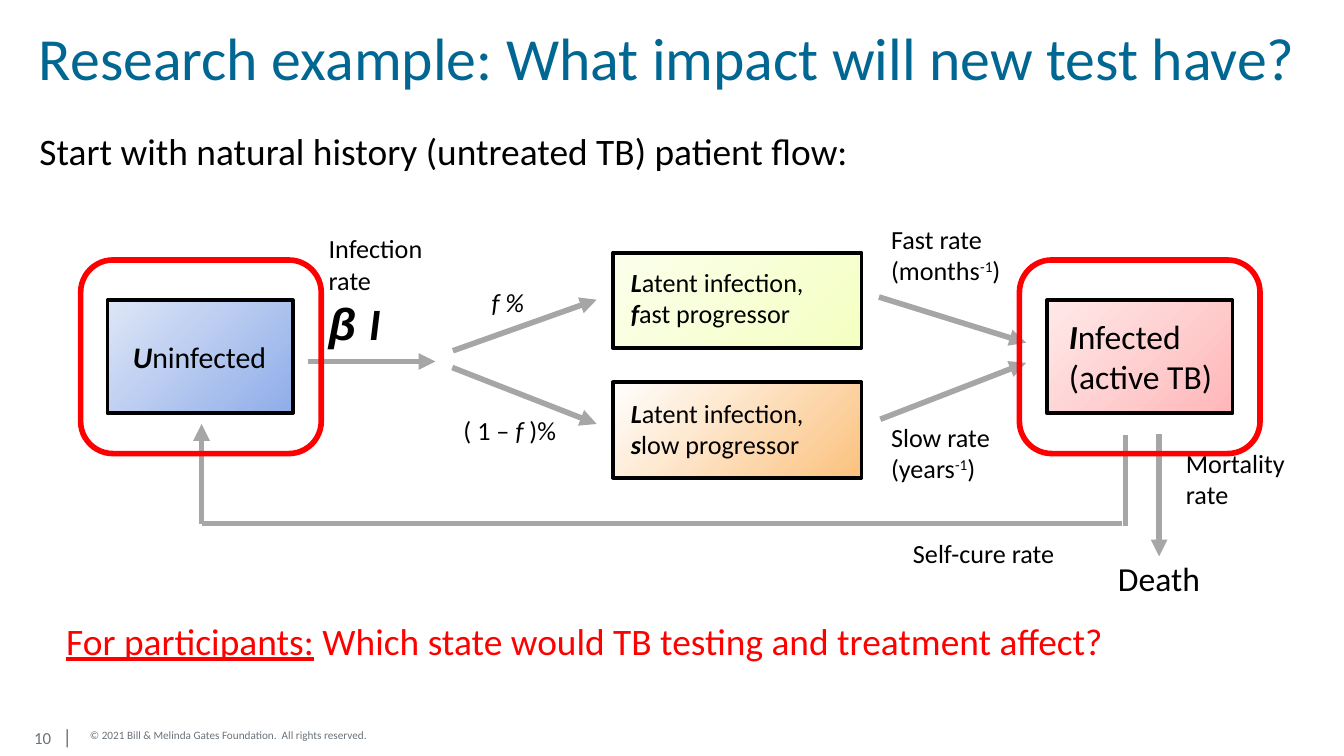
from pptx import Presentation
from pptx.dml.color import RGBColor
from pptx.enum.shapes import MSO_CONNECTOR, MSO_SHAPE
from pptx.enum.text import MSO_ANCHOR, MSO_AUTO_SIZE, PP_ALIGN
from pptx.oxml.ns import qn
from pptx.util import Pt
from lxml.etree import SubElement

PX = 4572
COLORS = {
    "title": "006692", "text": "000000", "alert": "FF0000",
    "arrow": "A6A6A6", "footer": "6A737B",
    "uninfected": ("8FADE9", "DEE6F7"), "infected": ("FFB7B9", "FFE9E9"),
    "fast": ("F4FFC2", "FBFFEB"), "slow": ("FBC17E", "FFFFFF"),
}
INITIAL = {"bold": True, "italic": True}
ITALIC = {"italic": True}
SUPERSCRIPT = {"baseline": "30000"}


def rgb(name):
    """Return the colour stored under a name."""
    return RGBColor.from_string(COLORS[name])


def place(*lengths):
    """Turn px lengths into EMU."""
    return [length * PX for length in lengths]


def write(frame, spans, size, color, inset=(20, 10)):
    """Fill a text frame with one paragraph of styled spans."""
    frame.margin_left = frame.margin_right = inset[0] * PX
    frame.margin_top = frame.margin_bottom = inset[1] * PX
    paragraph = frame.paragraphs[0]
    paragraph.alignment = PP_ALIGN.LEFT
    paragraph.font.name = "Calibri"
    paragraph.font.size = Pt(size)
    paragraph.font.color.rgb = rgb(color)
    for text, style in spans:
        if text == "\n":
            paragraph.add_line_break()
            continue
        run = paragraph.add_run()
        run.text = text
        for key, value in style.items():
            if key == "baseline":
                run._r.get_or_add_rPr().set(key, value)
            else:
                setattr(run.font, key, value)


def add_title(slide, text):
    """Move and format the title placeholder."""
    title = slide.shapes.title
    title.left, title.top, title.width, title.height = place(40, 22, 1910, 136)
    frame = title.text_frame
    frame.auto_size = MSO_AUTO_SIZE.NONE
    frame.vertical_anchor = MSO_ANCHOR.TOP
    write(frame, [(text, {})], 32, "title", (18, 9))


def add_label(slide, box, spans, size=14, color="text", inset=(20, 10), wrap=True):
    """Add a text box that grows with its text."""
    frame = slide.shapes.add_textbox(*place(*box)).text_frame
    frame.word_wrap = wrap
    frame.auto_size = MSO_AUTO_SIZE.SHAPE_TO_FIT_TEXT
    write(frame, spans, size, color, inset)


def add_footer(slide, box, spans, size):
    """Add a small vertically centred footer text."""
    frame = slide.shapes.add_textbox(*place(*box)).text_frame
    frame.word_wrap = True
    frame.vertical_anchor = MSO_ANCHOR.MIDDLE
    write(frame, spans, size, "footer", (12, 6))


def add_state(slide, box, state):
    """Add a gradient box for one patient state."""
    shape = slide.shapes.add_shape(MSO_SHAPE.RECTANGLE, *place(*box))
    shape.shadow.inherit = False
    shape.fill.gradient()
    shape.fill.gradient_angle = 135
    for stop, color in zip(shape.fill.gradient_stops, COLORS[state]):
        stop.color.rgb = RGBColor.from_string(color)
    shape.line.color.rgb = rgb("text")
    shape.line.width = Pt(2)


def add_highlight(slide, box):
    """Add a red rounded outline around a state."""
    shape = slide.shapes.add_shape(MSO_SHAPE.ROUNDED_RECTANGLE, *place(*box))
    shape.shadow.inherit = False
    shape.fill.background()
    shape.line.color.rgb = rgb("alert")
    shape.line.width = Pt(3)


def add_flow(slide, ends, arrow=True):
    """Add a grey flow line, with an arrowhead if wanted."""
    flow = slide.shapes.add_connector(MSO_CONNECTOR.STRAIGHT, *place(*ends))
    flow.line.color.rgb = rgb("arrow")
    flow.line.width = Pt(3)
    if arrow:
        SubElement(flow.line._get_or_add_ln(), qn("a:tailEnd"), type="triangle")
    SubElement(flow._element.spPr, qn("a:effectLst"))


def main():
    """Build the patient flow slide."""
    deck = Presentation()
    deck.slide_width, deck.slide_height = place(2000, 1125)
    slide = deck.slides.add_slide(deck.slide_layouts[5])

    add_title(slide, "Research example: What impact will new test have?")
    add_footer(slide, (39, 1054, 94, 82), [("10   ", {}), ("|", {"size": Pt(11)})], 9)
    add_footer(slide, (122, 1064, 634, 60),
               [("© 2021 Bill & Melinda Gates Foundation.  All rights reserved.", {})], 6)
    add_label(slide, (39, 181, 1256, 88),
              [("Start with natural history (untreated TB) patient flow:", {})],
              20, wrap=False)

    add_state(slide, (160, 447, 276, 168), "uninfected")
    add_label(slide, (178, 494, 240, 74), [("U", INITIAL), ("ninfected", {})], 16)
    add_state(slide, (1558, 447, 276, 168), "infected")
    add_label(slide, (1571, 460, 260, 142), [("I", INITIAL), ("nfected (active TB)", {})], 18)
    for speed, box_top, label_top in (("fast", 376, 386), ("slow", 569, 581)):
        add_state(slide, (912, box_top, 370, 142), speed)
        add_label(slide, (919, label_top, 344, 114),
                  [("L", INITIAL), ("atent infection, ", {}),
                   (speed[0], INITIAL), (speed[1:] + " progressor", {})])

    for ends in ((458, 538, 648, 538), (674, 522, 888, 446), (673, 547, 888, 631),
                 (1308, 442, 1527, 510), (1310, 624, 1527, 540),
                 (1725, 646, 1725, 828), (300, 780, 300, 631)):
        add_flow(slide, ends)
    for ends in ((1675, 648, 1675, 783), (1670, 779, 300, 779)):
        add_flow(slide, ends, arrow=False)

    force = {"size": Pt(24), **INITIAL}
    add_label(slide, (489, 346, 156, 176),
              [("Infection rate", {}), ("\n", {}),
               ("β ", {"name": "Arial", **force}), ("I", force)], inset=(0, 0))
    for top, width, rate in ((332, 218, "Fast rate (months"), (627, 228, "Slow rate (years")):
        add_label(slide, (1326, top, width, 94),
                  [(rate, {}), ("-1", SUPERSCRIPT), (")", {})], inset=(0, 0))
    add_label(slide, (712, 416, 112, 68), [("f %", ITALIC)])
    add_label(slide, (670, 607, 178, 68), [("( 1 – ", {}), ("f ", ITALIC), (")%", {})])
    add_label(slide, (1339, 790, 280, 68), [("Self-cure rate", {})])
    add_label(slide, (1745, 656, 236, 114), [("Mortality rate", {})])
    add_label(slide, (1644, 821, 166, 80), [("Death", {})], 18)

    add_label(slide, (79, 910, 1588, 88),
              [("For participants:", {"underline": True}),
               (" Which state would TB testing and treatment affect?", {})],
              20, "alert", wrap=False)
    for left in (1517, 120):
        add_highlight(slide, (left, 387, 358, 288))

    deck.save("out.pptx")


if __name__ == "__main__":
    main()
